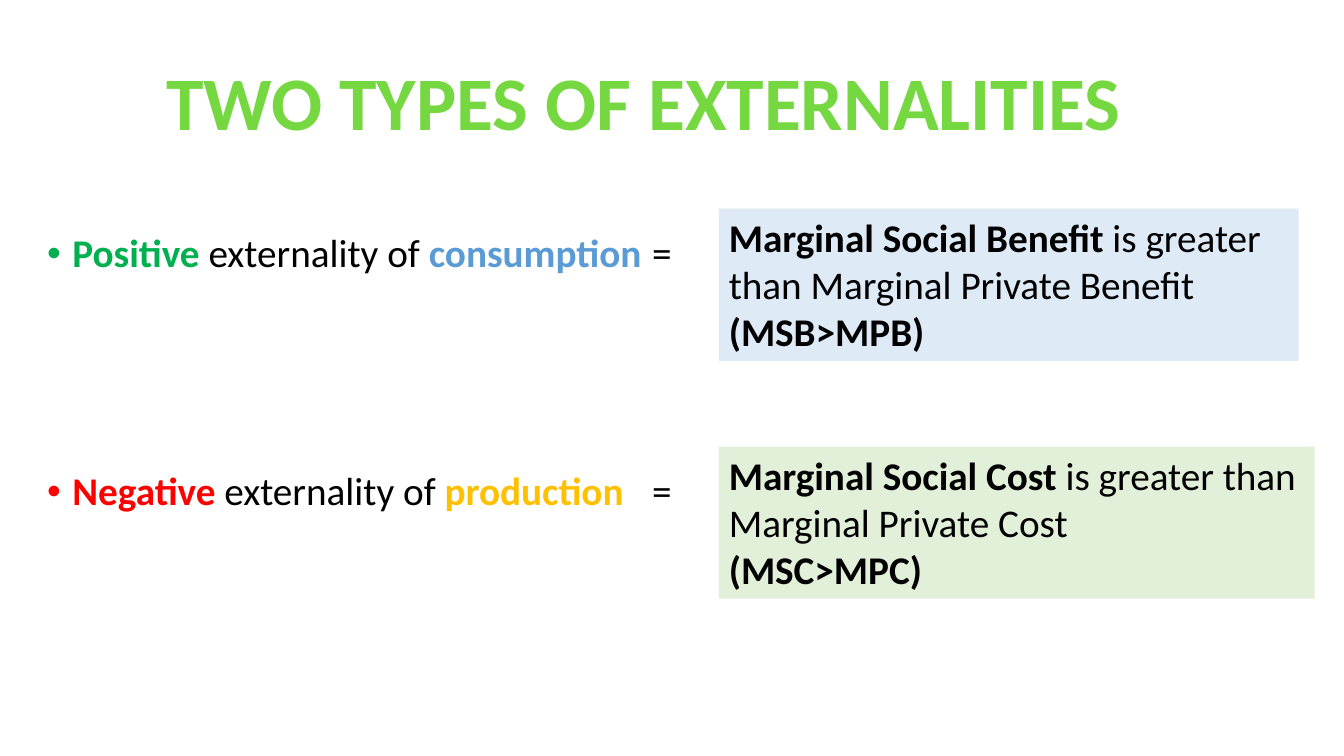
from pptx import Presentation
from pptx import util as u
from pptx.dml import color
from pptx.enum import shapes, text
from lxml import etree


def rgb(code):
    return color.RGBColor.from_string(code)


def write(para, runs, size=28):
    para.font.name = "Calibri"
    para.font.size = u.Pt(size)
    for words, code, bold in runs:
        run = para.add_run()
        run.text = words
        run.font.bold = bold
        run.font.color.rgb = rgb(code)


def add_bullet(para):
    props = para._p.get_or_add_pPr()
    props.set("marL", str(u.Inches(0.25)))
    props.set("indent", str(-u.Inches(0.25)))
    space = "http://schemas.openxmlformats.org/drawingml/2006/main"
    font = etree.SubElement(props, "{%s}buFont" % space)
    font.set("typeface", "Arial")
    mark = etree.SubElement(props, "{%s}buChar" % space)
    mark.set("char", "•")


def add_title(slide, left, top, width, height):
    title = slide.shapes.title
    title.left, title.top = u.Inches(left), u.Inches(top)
    title.width, title.height = u.Inches(width), u.Inches(height)
    frame = title.text_frame
    frame.word_wrap = True
    frame.auto_size = text.MSO_AUTO_SIZE.NONE
    frame.vertical_anchor = text.MSO_ANCHOR.MIDDLE
    para = frame.paragraphs[0]
    para.alignment = text.PP_ALIGN.CENTER
    write(para, [("TWO TYPES OF EXTERNALITIES", "75D840", True)], 54)


def add_term(slide, left, top, width, height, kind, hue, cause, tint):
    box = slide.shapes.add_textbox(
        u.Inches(left), u.Inches(top), u.Inches(width), u.Inches(height))
    box.text_frame.word_wrap = True
    para = box.text_frame.paragraphs[0]
    para.line_spacing = 0.9
    write(para, [(kind, hue, True), (" externality of ", "000000", False),
                 (cause, tint, True), (" \t=", "000000", False)])
    add_bullet(para)


def add_rule(slide, left, top, width, height, fill, lead, rest, sign):
    box = slide.shapes.add_shape(
        shapes.MSO_SHAPE.RECTANGLE,
        u.Inches(left), u.Inches(top), u.Inches(width), u.Inches(height))
    box.shadow.inherit = False
    box.fill.solid()
    box.fill.fore_color.rgb = rgb(fill)
    box.line.fill.background()
    frame = box.text_frame
    frame.word_wrap = True
    frame.vertical_anchor = text.MSO_ANCHOR.TOP
    lines = [[(lead, "000000", True), (rest, "000000", False)],
             [(sign, "000000", True)]]
    for para, runs in zip([frame.paragraphs[0], frame.add_paragraph()], lines):
        para.alignment = text.PP_ALIGN.LEFT
        write(para, runs)


def add_row(slide, left, top, width, height, term, rule):
    add_term(slide, left, top + 0.2, 6.63, 0.55, *term)
    add_rule(slide, left + 6.76, top, width - 6.76, height, *rule)


def main():
    deck = Presentation()
    deck.slide_width, deck.slide_height = u.Inches(13.33), u.Inches(7.5)
    slide = deck.slides.add_slide(deck.slide_layouts[5])
    add_title(slide, 1.28, 0.49, 10.21, 1.01)
    rows = [
        (12.51, ("Positive", "00B050", "consumption", "5B9BD5"),
         ("DEEBF7", "Marginal Social Benefit ",
          "is greater than Marginal Private Benefit", "(MSB>MPB)")),
        (12.67, ("Negative", "FF0000", "production", "FFC000"),
         ("E2F0D9", "Marginal Social Cost ",
          "is greater than Marginal Private Cost", "(MSC>MPC)")),
    ]
    for place, (width, term, rule) in enumerate(rows):
        add_row(slide, 0.37, 2.07 + 2.36 * place, width, 1.51, term, rule)
    deck.save("out.pptx")


if __name__ == "__main__":
    main()
